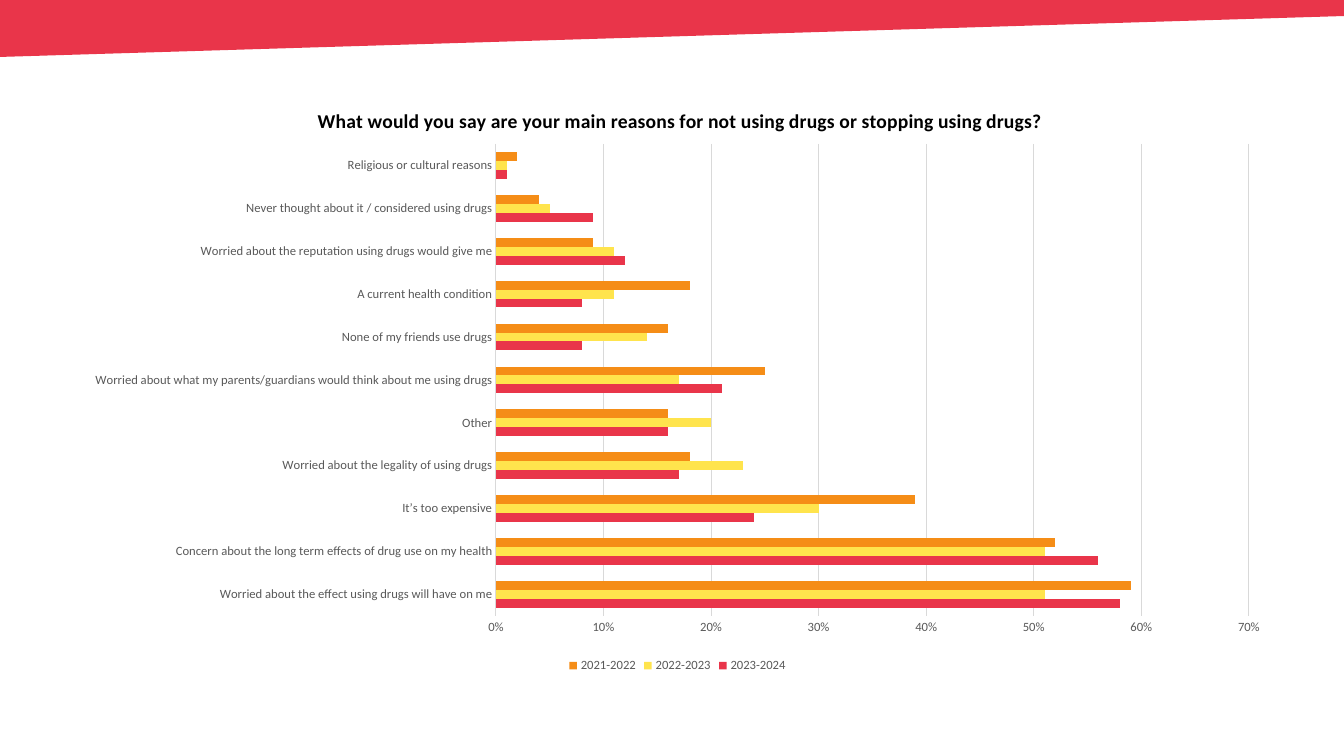
from lxml import etree
from pptx import Presentation
from pptx.chart.data import CategoryChartData
from pptx.dml.color import RGBColor
from pptx.enum.chart import XL_CHART_TYPE, XL_LEGEND_POSITION, XL_TICK_MARK
from pptx.oxml.ns import qn
from pptx.util import Pt

BAR_CLUSTERED = XL_CHART_TYPE.BAR_CLUSTERED
BOTTOM = XL_LEGEND_POSITION.BOTTOM
NO_TICK = XL_TICK_MARK.NONE

TITLE = "What would you say are your main reasons for not using drugs or stopping using drugs?"
YEARS = ("2023-2024", "2022-2023", "2021-2022")
REASONS = [  # reason, then one share for each of YEARS
    ("Worried about the effect using drugs will have on me", 0.58, 0.51, 0.59),
    ("Concern about the long term effects of drug use on my health", 0.56, 0.51, 0.52),
    ("It’s too expensive", 0.24, 0.30, 0.39),
    ("Worried about the legality of using drugs", 0.17, 0.23, 0.18),
    ("Other", 0.16, 0.20, 0.16),
    ("Worried about what my parents/guardians would think about me using drugs",
     0.21, 0.17, 0.25),
    ("None of my friends use drugs", 0.08, 0.14, 0.16),
    ("A current health condition", 0.08, 0.11, 0.18),
    ("Worried about the reputation using drugs would give me", 0.12, 0.11, 0.09),
    ("Never thought about it / considered using drugs", 0.09, 0.05, 0.04),
    ("Religious or cultural reasons", 0.01, 0.01, 0.02),
]


class Theme:
    font = "Calibri"
    red = RGBColor(0xE9, 0x35, 0x4A)
    years = (red, RGBColor(0xFF, 0xE4, 0x4D), RGBColor(0xF5, 0x8D, 0x17))
    black = RGBColor(0, 0, 0)
    label = RGBColor(0x59, 0x59, 0x59)
    grid = RGBColor(0xD9, 0xD9, 0xD9)
    title_size, base_size, label_size = Pt(14), Pt(10), Pt(9)
    line_width = Pt(0.75)


# Lengths in px
PX = 914400 / 100.8
SLIDE = (1344, 756)
BANNER = [(-1, 0), (0, 57), (1346, 16), (1344, 0)]
CHART = (69, 79, 1217, 598)
PLOT = (496, 144, 753, 472)
TITLE_AT = (314, 104)


def emu(px):
    return round(px * PX)


def set_font(font, size, color, bold=False):
    font.name, font.size, font.bold = Theme.font, size, bold
    font.color.rgb = color


def set_line(line):
    line.color.rgb = Theme.grid
    line.width = Theme.line_width


def place(element, index, left, top, size=None):
    """Give a chart part a fixed place, as fractions of the chart frame."""
    layout = element.find(qn("c:layout"))
    if layout is None:
        layout = etree.Element(qn("c:layout"))
        element.insert(index, layout)
    x, y, width, height = CHART
    settings = [("xMode", "edge"), ("yMode", "edge"),
                ("x", (left - x) / width), ("y", (top - y) / height)]
    if size:
        settings.insert(0, ("layoutTarget", "inner"))
        settings += [("w", size[0] / width), ("h", size[1] / height)]
    manual = etree.SubElement(layout, qn("c:manualLayout"))
    for tag, value in settings:
        etree.SubElement(manual, qn("c:" + tag)).set("val", str(value))


def add_banner(s):
    builder = s.shapes.build_freeform(*BANNER[0], scale=PX)
    builder.add_line_segments(BANNER[1:], close=True)
    sp = builder.convert_to_shape()
    sp.shadow.inherit = False
    sp.fill.solid()
    sp.fill.fore_color.rgb = Theme.red
    sp.line.fill.background()


def add_reasons_chart(s):
    reasons, *shares = zip(*REASONS)
    data = CategoryChartData(number_format="0%")
    data.categories = reasons
    for year, values in zip(YEARS, shares):
        data.add_series(year, values)
    chart = s.shapes.add_chart(BAR_CLUSTERED, *map(emu, CHART), data).chart
    set_font(chart.font, Theme.base_size, Theme.black)

    chart.has_title = True
    p = chart.chart_title.text_frame.paragraphs[0]
    p.text = TITLE
    set_font(p.font, Theme.title_size, Theme.black, bold=True)
    place(chart.chart_title._element, 1, *TITLE_AT)

    plot = chart.plots[0]
    plot.gap_width, plot.overlap = 182, 0
    plot.vary_by_categories = False
    for series, color in zip(plot.series, Theme.years):
        series.format.fill.solid()
        series.format.fill.fore_color.rgb = color
    place(chart._chartSpace.chart.plotArea, 0, *PLOT[:2], size=PLOT[2:])

    for axis in (chart.category_axis, chart.value_axis):
        axis.major_tick_mark = axis.minor_tick_mark = NO_TICK
        set_font(axis.tick_labels.font, Theme.label_size, Theme.label)
    set_line(chart.category_axis.format.line)
    shares_axis = chart.value_axis
    shares_axis.minimum_scale, shares_axis.maximum_scale = 0, 0.7
    shares_axis.major_unit = 0.1
    shares_axis.tick_labels.number_format = "0%"
    shares_axis.tick_labels.number_format_is_linked = False
    shares_axis.format.line.fill.background()
    set_line(shares_axis.major_gridlines.format.line)

    chart.has_legend = True
    chart.legend.position = BOTTOM
    chart.legend.include_in_layout = False
    set_font(chart.legend.font, Theme.label_size, Theme.label)


def main():
    prs = Presentation()
    prs.slide_width, prs.slide_height = map(emu, SLIDE)
    s = prs.slides.add_slide(prs.slide_layouts[6])
    add_banner(s)
    add_reasons_chart(s)
    prs.save("out.pptx")


if __name__ == "__main__":
    main()
